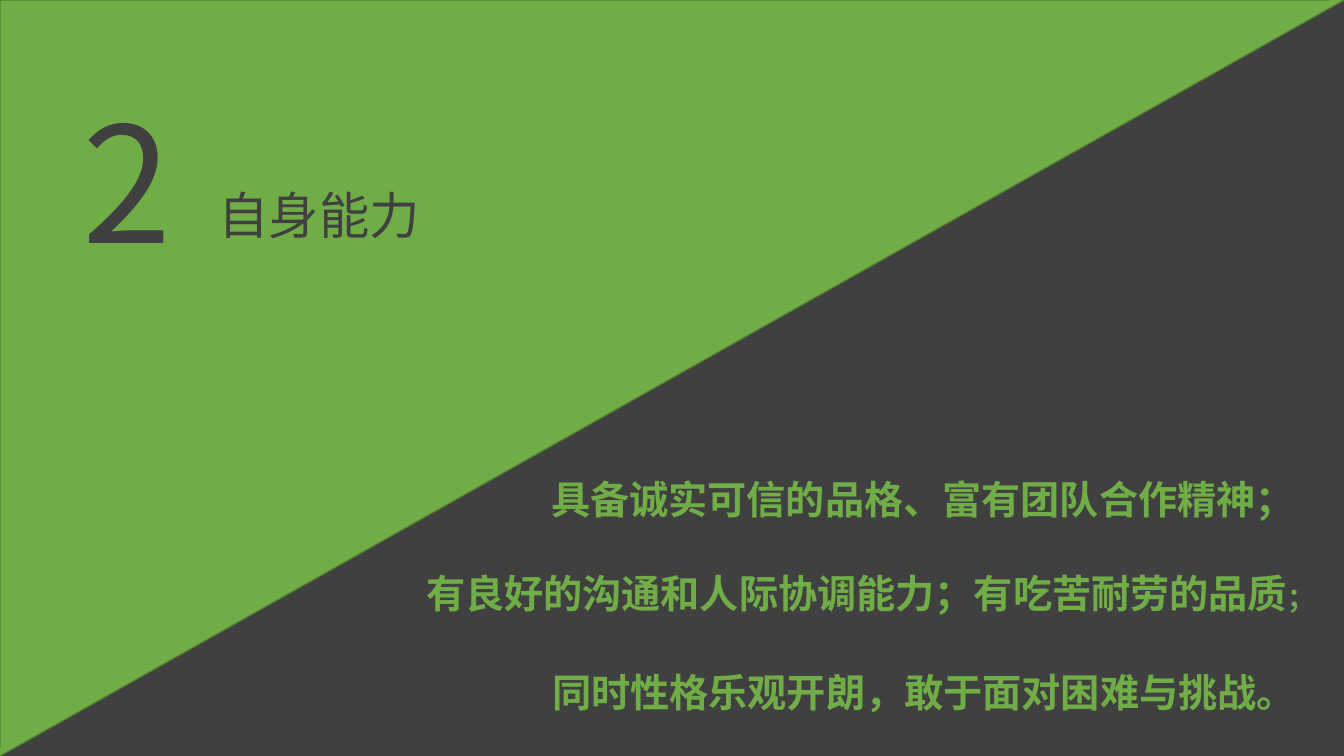
from lxml import etree
from pptx import Presentation
from pptx.dml.color import RGBColor
from pptx.enum.shapes import MSO_CONNECTOR, MSO_SHAPE
from pptx.enum.text import MSO_AUTO_SIZE, PP_ALIGN
from pptx.oxml.ns import qn
from pptx.util import Cm, Pt

STRAIGHT = MSO_CONNECTOR.STRAIGHT
TRIANGLE = MSO_SHAPE.RIGHT_TRIANGLE
GROW = MSO_AUTO_SIZE.SHAPE_TO_FIT_TEXT
LEFT, CENTER = PP_ALIGN.LEFT, PP_ALIGN.CENTER

COLORS = {"dark": "404040", "green": "70AD47", "edge": "538035"}
FONT = "Noto Sans CJK SC"
WIDTH, HEIGHT = 33.87, 19.05

HEADING = {"align": LEFT, "spacing": 1.0, "wrap": True, "color": "dark", "bold": False}
STATEMENT = {"align": CENTER, "spacing": 1.5, "wrap": False, "color": "green", "bold": True}

STATEMENTS = [
    ((3.02, 11.25, 19.28, 2.03), [("具备诚实可信的品格、富有团队合作精神；", 28)]),
    ((-0.13, 13.64, 22.94, 2.03),
     [("有良好的沟通和人际协调能力；有吃苦耐劳的品质", 28), ("；", 20)]),
    ((0.1, 16.13, 25.17, 2.03), [("同时性格乐观开朗，敢于面对困难与挑战。", 28)]),
]


def color(name):
    return RGBColor.from_string(COLORS[name])


def add_text(page, place, spans, look):
    box = page.shapes.add_textbox(*[Cm(length) for length in place])
    frame = box.text_frame
    for name, value in {"word_wrap": look["wrap"], "auto_size": GROW}.items():
        setattr(frame, name, value)
    para = frame.paragraphs[0]
    for name, value in {"alignment": look["align"], "line_spacing": look["spacing"]}.items():
        setattr(para, name, value)
    for text, size in spans:
        span = para.add_run()
        span.text = text
        for name, value in {"name": FONT, "size": Pt(size), "bold": look["bold"]}.items():
            setattr(span.font, name, value)
        span.font.color.rgb = color(look["color"])
        east_asian = etree.SubElement(span.font._element, qn("a:ea"))
        east_asian.set("typeface", FONT)


def add_triangle(page, left, top, width, height):
    triangle = page.shapes.add_shape(
        TRIANGLE,
        Cm(left + (width - height) / 2), Cm(top + (height - width) / 2),
        Cm(height), Cm(width))
    triangle.rotation = 90
    triangle.shadow.inherit = False
    triangle.fill.solid()
    triangle.fill.fore_color.rgb = color("green")
    triangle.line.color.rgb = color("edge")
    triangle.line.width = Pt(1)


def add_diagonal(page, left, top, width, height):
    diagonal = page.shapes.add_connector(
        STRAIGHT,
        Cm(left + width + 1.06), Cm(top - 0.71),
        Cm(left - 0.56), Cm(top + height + 0.2))
    diagonal.line.color.rgb = color("green")
    diagonal.line.width = Pt(4.5)
    etree.SubElement(diagonal._element.spPr, qn("a:effectLst"))


def add_heading(page, left, top, number, title):
    add_text(page, (left, top, 2.46, 5.18), [(number, 115)], HEADING)
    add_text(page, (left + 3.43, top + 2.56, 8.74, 1.8), [(title, 36)], HEADING)


def add_statements(page, left, top):
    for (across, down, width, height), spans in STATEMENTS:
        add_text(page, (left + across, top + down, width, height), spans, STATEMENT)


def build_section_page(deck):
    page = deck.slides.add_slide(deck.slide_layouts[6])
    page.background.fill.solid()
    page.background.fill.fore_color.rgb = color("dark")
    add_triangle(page, 0, 0, WIDTH, HEIGHT)
    add_diagonal(page, 0, 0, WIDTH, HEIGHT)
    add_heading(page, 1.83, 1.96, "2", "自身能力")
    add_statements(page, 10.6, 0)


def main():
    deck = Presentation()
    deck.slide_width, deck.slide_height = Cm(WIDTH), Cm(HEIGHT)
    build_section_page(deck)
    deck.save("out.pptx")


if __name__ == "__main__":
    main()
